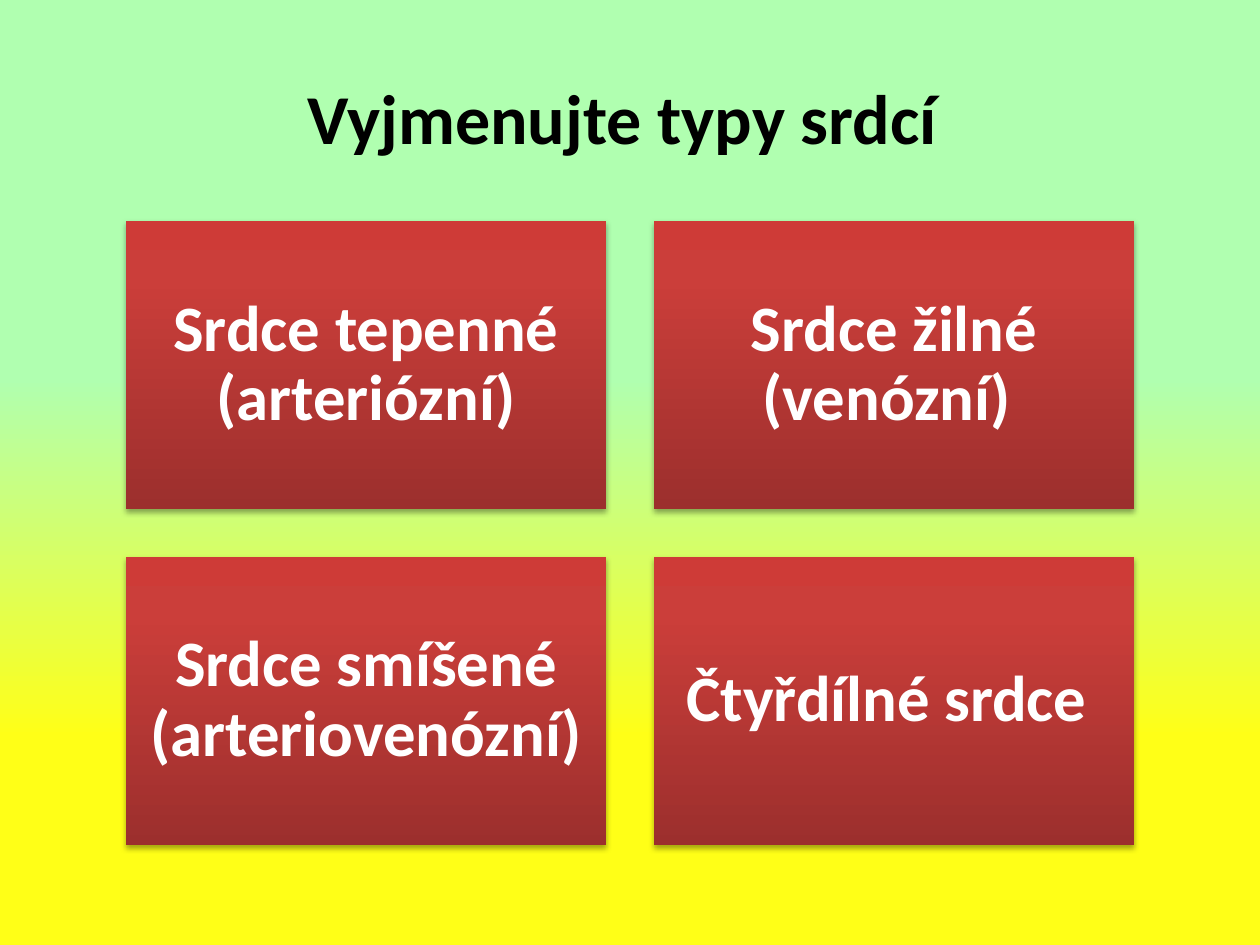
from lxml import etree
from pptx import Presentation
from pptx.dml.color import RGBColor
from pptx.enum.shapes import MSO_SHAPE as Shape
from pptx.enum.text import MSO_ANCHOR as Anchor, PP_ALIGN as Align
from pptx.oxml.ns import qn
from pptx.util import Emu, Pt

BLACK = RGBColor(0x00, 0x00, 0x00)
WHITE = RGBColor(0xFF, 0xFF, 0xFF)
GREEN = RGBColor(0xB0, 0xFF, 0xB0)
YELLOW = RGBColor(0xFF, 0xFF, 0x17)
DARK_RED = RGBColor(0x9C, 0x2F, 0x2D)
RED = RGBColor(0xCB, 0x3E, 0x3A)
BRIGHT_RED = RGBColor(0xCE, 0x3B, 0x37)

PAGE_STOPS = [(40, GREEN), (78, YELLOW)]
CARD_STOPS = [(0, DARK_RED), (80, RED), (100, BRIGHT_RED)]
HEART_TYPES = [
    "Srdce tepenné (arteriózní)",
    "Srdce žilné (venózní) ",
    "Srdce smíšené (arteriovenózní) ",
    "Čtyřdílné srdce ",
]
LEFT, TOP = 126, 221
CARD_WIDTH, CARD_HEIGHT, GAP = 480, 288, 48


def px(length):
    return Emu(round(length * 914400 / 126))


def add_node(parent, tag, **attributes):
    values = {name: str(value) for name, value in attributes.items()}
    return etree.SubElement(parent, qn(tag), values)


class SlideBuilder:
    font = "Calibri"

    def __init__(self, deck):
        self.page = deck.slides.add_slide(deck.slide_layouts[6])

    def gradient(self, fill, owner, stops, angle):
        fill.gradient()
        gradient = next(owner.iter(qn("a:gradFill")))
        for child in list(gradient):
            gradient.remove(child)
        stop_list = add_node(gradient, "a:gsLst")
        for position, color in stops:
            stop = add_node(stop_list, "a:gs", pos=position * 1000)
            add_node(stop, "a:srgbClr", val=color)
        add_node(gradient, "a:lin", ang=angle * 60000, scaled=0)

    def background(self, stops):
        self.gradient(self.page.background.fill, self.page.element, stops, 90)

    def shadow(self, box):
        box.shadow.inherit = False
        effects = box.element.spPr.find(qn("a:effectLst"))
        shadow = add_node(effects, "a:outerShdw", blurRad=Pt(3.1), dist=Pt(1.8),
                          dir=90 * 60000, rotWithShape=0)
        color = add_node(shadow, "a:srgbClr", val=BLACK)
        add_node(color, "a:alpha", val=35000)

    def label(self, box, text, size, color):
        frame = box.text_frame
        frame.word_wrap = True
        frame.vertical_anchor = Anchor.MIDDLE
        para = frame.paragraphs[0]
        para.alignment = Align.CENTER
        span = para.add_run()
        span.text = text
        span.font.name = self.font
        span.font.size = Pt(size)
        span.font.bold = True
        span.font.color.rgb = color
        return para

    def title(self, text, left, top, width, height):
        box = self.page.shapes.add_textbox(px(left), px(top), px(width), px(height))
        self.label(box, text, 40, BLACK)

    def card(self, text, left, top):
        box = self.page.shapes.add_shape(
            Shape.RECTANGLE, px(left), px(top), px(CARD_WIDTH), px(CARD_HEIGHT))
        self.gradient(box.fill, box.element.spPr, CARD_STOPS, 270)
        box.line.fill.background()
        self.shadow(box)
        frame = box.text_frame
        frame.margin_left = frame.margin_right = px(19)
        frame.margin_top = frame.margin_bottom = px(19)
        para = self.label(box, text, 37, WHITE)
        para.line_spacing = 0.9


def main():
    deck = Presentation()
    deck.slide_width, deck.slide_height = px(1260), px(945)
    builder = SlideBuilder(deck)
    builder.background(PAGE_STOPS)
    builder.title("Vyjmenujte typy srdcí ", 63, 38, 1134, 158)
    for index, text in enumerate(HEART_TYPES):
        row, column = divmod(index, 2)
        builder.card(text, LEFT + column * (CARD_WIDTH + GAP),
                     TOP + row * (CARD_HEIGHT + GAP))
    deck.save("out.pptx")


if __name__ == "__main__":
    main()
